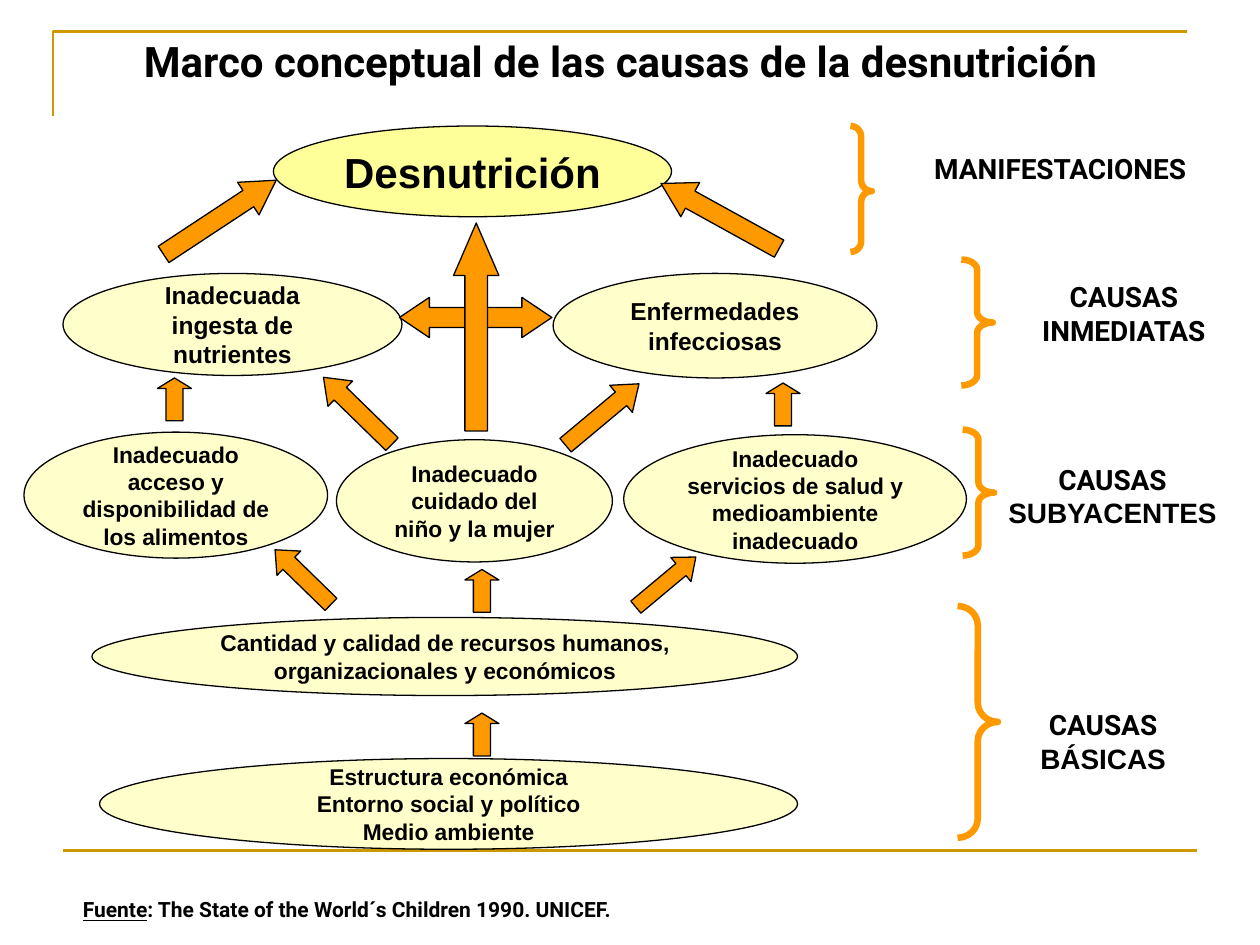
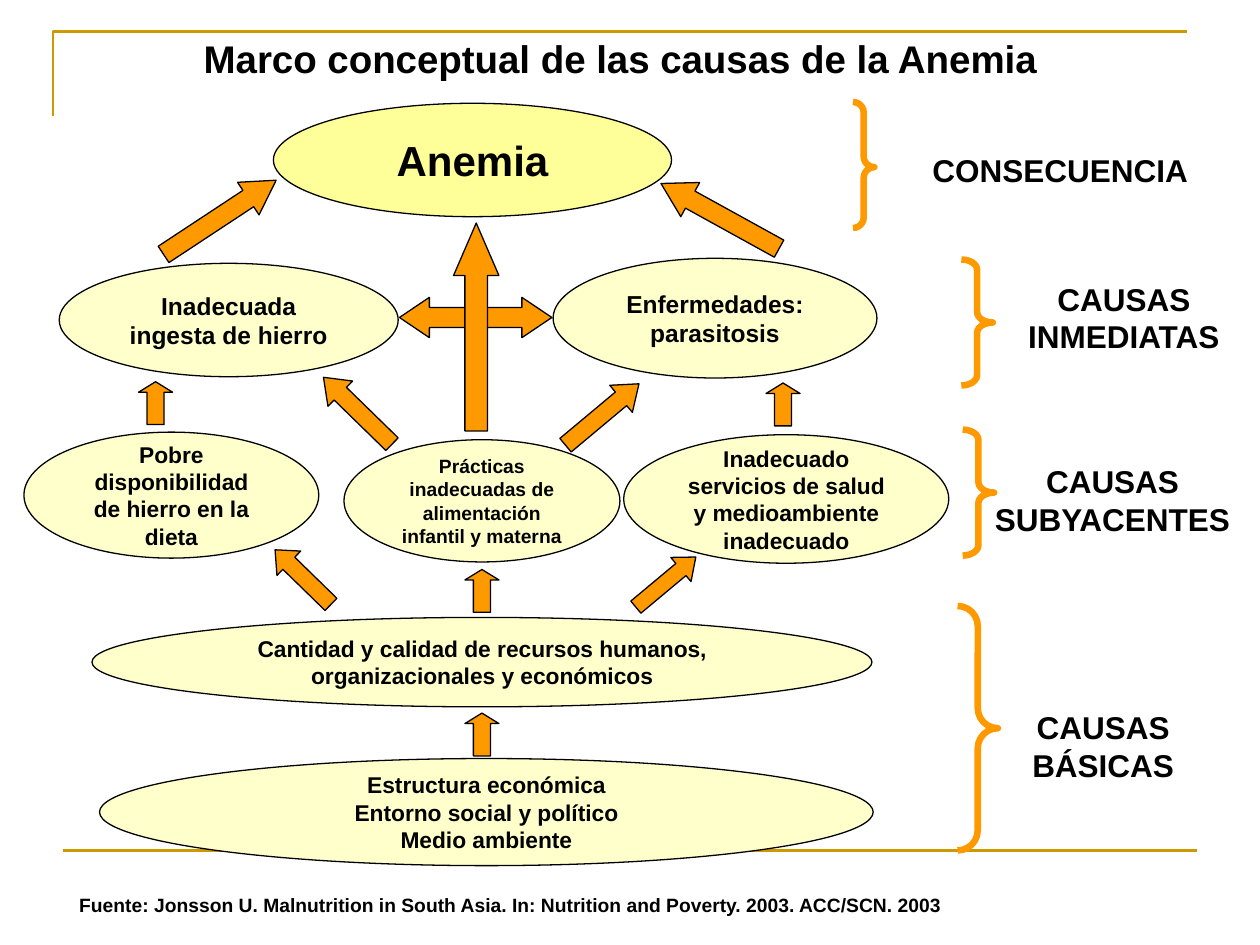
from pptx import Presentation
from pptx import util as u
from pptx.dml.color import RGBColor
from pptx.enum import shapes, text
from pptx.oxml.ns import qn
from lxml import etree

PX = u.Inches(1) // 100
COLORS = {"ink": "000000", "rule": "CC9900", "effect": "FFFF99", "cause": "FFFFCC", "arrow": "FF9900"}
SHAPE = shapes.MSO_SHAPE
ALIGN = text.PP_ALIGN

RISING_ARROWS = [
    ((159, 119, 31, 107), 56.6, 0.854),
    ((556, 118, 31, 107), 298.9, 0.854),
    ((360, 177, 36, 165), 0, 1.157),
    ((464, 291, 28, 76), 50.1, 0.665),
    ((270, 288, 28, 76), 314.3, 0.665),
    ((227, 427, 27, 62), 314.3, 0.566),
    ((516, 431, 25, 62), 50.1, 0.618),
]
SHORT_ARROWS = [(608, 304), (369, 452), (369, 566)]
MIDDLE_BRACES = [((763, 206, 25, 100), 0.329, 0.5), ((764, 341, 25, 100), 0.329, 0.5)]
LABEL_PLACES = [(706, 115, 271), (784, 217, 216), (775, 362, 216), (805, 557, 141)]
RESOURCES = ["Cantidad y calidad de recursos humanos, organizacionales y económicos"]
STRUCTURE = ["Estructura económica", "Entorno social y político", "Medio ambiente"]
SERVICES = ["Inadecuado servicios de salud y medioambiente inadecuado"]

FRAMEWORKS = [
    dict(
        title="Marco conceptual de las causas de la desnutrición",
        title_style=("Roboto", 24),
        effect=("Desnutrición", (217, 100, 316, 72)),
        causes=[
            (["Inadecuada ingesta de nutrientes"], (50, 217, 269, 81), 14),
            (["Enfermedades infecciosas"], (439, 217, 257, 83), 14),
            (["Inadecuado acceso y disponibilidad de los alimentos"], (19, 343, 241, 100), 13),
            (["Inadecuado cuidado del niño y la mujer"], (267, 349, 219, 97), 13),
            (SERVICES, (495, 345, 272, 102), 13),
            (RESOURCES, (73, 490, 560, 62), 13),
            (STRUCTURE, (79, 602, 554, 72), 13),
        ],
        access_arrow=(125, 300),
        outer_braces=[((675, 100, 17, 100), 0.5, 0.517), ((760, 481, 32, 184), 0.475, 0.5)],
        label_size=16,
        labels=[
            [("MANIFESTACIONES", "Roboto")],
            [("CAUSAS INMEDIATAS", "Roboto")],
            [("CAUSAS", "Roboto"), (" SUBYACENTES", "Arial")],
            [("CAUSAS", "Roboto"), (" BÁSICAS", "Arial")],
        ],
        source=[("Fuente", "Roboto", True), (": The State of the World´s Children 1990. UNICEF.", "Roboto")],
        source_style=((56, 707, 586, 30), 12, ALIGN.JUSTIFY),
    ),
    dict(
        title="Marco conceptual de las causas de la Anemia",
        title_style=("Arial", 22),
        effect=("Anemia", (217, 82, 316, 90)),
        causes=[
            (["Inadecuada ingesta de hierro"], (47, 209, 269, 90), 14),
            (["Enfermedades: parasitosis"], (439, 205, 257, 95), 14),
            (["Pobre disponibilidad de hierro en la dieta"], (19, 343, 234, 100), 13),
            (["Prácticas inadecuadas de alimentación infantil y materna"], (273, 349, 219, 97), 11),
            (SERVICES, (495, 345, 258, 102), 13),
            (RESOURCES, (73, 490, 619, 71), 13),
            (STRUCTURE, (79, 602, 614, 85), 13),
        ],
        access_arrow=(110, 303),
        outer_braces=[((677, 81, 17, 100), 0.5, 0.517), ((760, 481, 32, 194), 0.5, 0.5)],
        label_size=18,
        labels=[
            [("CONSECUENCIA", "Arial")],
            [("CAUSAS INMEDIATAS", "Arial")],
            [("CAUSAS SUBYACENTES", "Arial")],
            [("CAUSAS BÁSICAS", "Arial")],
        ],
        source=[("Fuente: Jonsson U. Malnutrition in South Asia. In: Nutrition and Poverty. 2003. ACC/SCN. 2003", "Arial")],
        source_style=((53, 704, 767, 28), 11, ALIGN.LEFT),
    ),
]


class Deck:
    """Holds the shared style and the slide being drawn."""

    def __init__(self):
        self.prs = Presentation()
        self.prs.slide_width, self.prs.slide_height = 1000 * PX, 750 * PX
        self.slide = None

    def new_slide(self, title, font, size):
        self.slide = self.prs.slides.add_slide(self.prs.slide_layouts[5])
        heading = self.slide.shapes.title
        heading.left, heading.top, heading.width, heading.height = self.box((56, 23, 873, 50))
        heading.text_frame.vertical_anchor = text.MSO_ANCHOR.TOP
        self.fill_text(heading.text_frame, [[(title, font)]], size)
        self.frame()

    def box(self, place):
        return [n * PX for n in place]

    def color(self, name):
        return RGBColor.from_string(COLORS[name])

    def stroke(self, item, name, width):
        item.line.color.rgb = self.color(name)
        item.line.width = u.Pt(width)

    def frame(self):
        outline = self.slide.shapes.build_freeform(42, 92, scale=PX)
        outline.add_line_segments([(42, 25), (942, 25)], close=False)
        corner = outline.convert_to_shape()
        corner.fill.background()
        corner.shadow.inherit = False
        self.stroke(corner, "rule", 1.5)
        base = self.slide.shapes.add_connector(
            shapes.MSO_CONNECTOR.STRAIGHT, *self.box((50, 675, 950, 675)))
        self.stroke(base, "rule", 1.5)
        etree.SubElement(base._element.spPr, qn("a:effectLst"))

    def fill_text(self, frame, paragraphs, size, align=ALIGN.CENTER, wrap=True):
        frame.word_wrap = wrap
        frame.auto_size = text.MSO_AUTO_SIZE.NONE
        for i, runs in enumerate(paragraphs):
            paragraph = frame.add_paragraph() if i else frame.paragraphs[0]
            paragraph.alignment = align
            for words, font, *underline in runs:
                run = paragraph.add_run()
                run.text = words
                run.font.name, run.font.size, run.font.bold = font, u.Pt(size), True
                run.font.color.rgb = self.color("ink")
                if underline:
                    run.font.underline = True

    def shape(self, kind, place, fill=None, line="ink", width=0.75, adjust=(), turn=0):
        item = self.slide.shapes.add_shape(kind, *self.box(place))
        item.shadow.inherit = False
        item.rotation = turn
        for i, value in enumerate(adjust):
            item.adjustments[i] = value
        if fill:
            item.fill.solid()
            item.fill.fore_color.rgb = self.color(fill)
        else:
            item.fill.background()
        self.stroke(item, line, width)
        return item

    def ellipse(self, lines, place, size, fill="cause", wrap=True):
        frame = self.shape(SHAPE.OVAL, place, fill).text_frame
        frame.vertical_anchor = text.MSO_ANCHOR.MIDDLE
        self.fill_text(frame, [[(line, "Arial")] for line in lines], size, wrap=wrap)

    def arrow(self, place, turn, head, kind=SHAPE.UP_ARROW):
        self.shape(kind, place, "arrow", adjust=(0.5, head), turn=turn)

    def brace(self, place, curve, tip):
        self.shape(SHAPE.RIGHT_BRACE, place, line="arrow", width=3.75, adjust=(curve, tip))

    def label(self, runs, place, size, align=ALIGN.CENTER):
        self.fill_text(self.slide.shapes.add_textbox(*self.box(place)).text_frame, [runs], size, align)


def draw_framework(deck, model):
    deck.new_slide(model["title"], *model["title_style"])
    effect, effect_place = model["effect"]
    deck.ellipse([effect], effect_place, 24, "effect", wrap=False)
    for cause in model["causes"]:
        deck.ellipse(*cause)
    deck.arrow((317, 236, 121, 32), 0, 0.744, SHAPE.LEFT_RIGHT_ARROW)
    for arrow in RISING_ARROWS:
        deck.arrow(*arrow)
    for left, top in SHORT_ARROWS + [model["access_arrow"]]:
        deck.arrow((left, top, 27, 34), 0, 0.309)
    for brace in MIDDLE_BRACES + model["outer_braces"]:
        deck.brace(*brace)
    size = model["label_size"]
    for level, (runs, place) in enumerate(zip(model["labels"], LABEL_PLACES)):
        height = (2 if level else 1) * size * 5 // 3 + 10
        deck.label(runs, (*place, height), size)
    deck.label(model["source"], *model["source_style"])


def main():
    deck = Deck()
    for model in FRAMEWORKS:
        draw_framework(deck, model)
    deck.prs.save("out.pptx")


if __name__ == "__main__":
    main()
